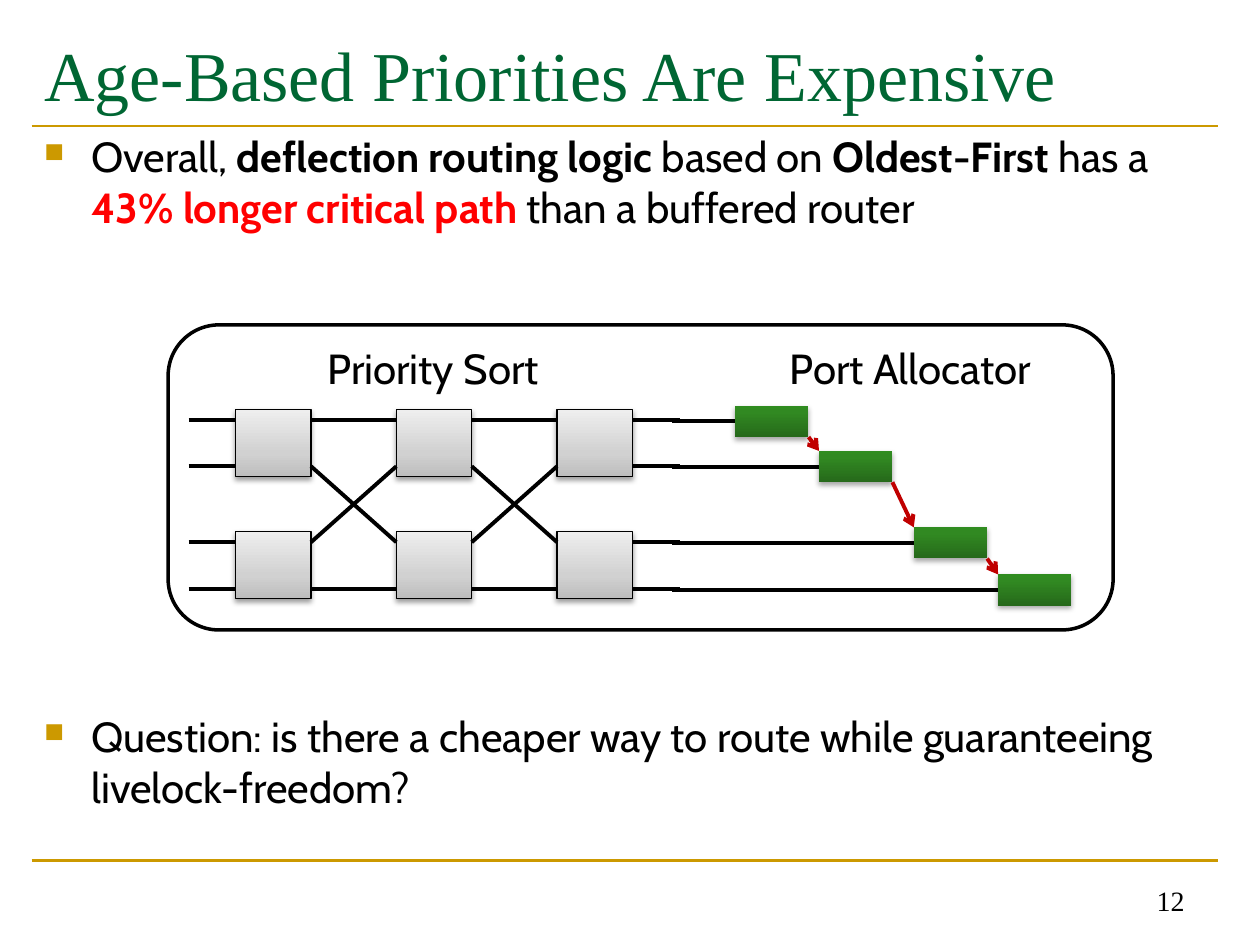
from lxml import etree
from pptx import Presentation, util as u
from pptx.dml.color import RGBColor
from pptx.enum import shapes, text
from pptx.oxml import parse_xml
from pptx.oxml.ns import qn

NS = 'xmlns:a="http://schemas.openxmlformats.org/drawingml/2006/main"'

# Content
TITLE = "Age-Based Priorities Are Expensive"
PAGE = "12"
# Each paragraph: space before in points, then (text, style) runs
BULLETS = [
    (0, [("Overall, ", ""), ("deflection routing logic", "bold"), (" based on ", ""),
         ("Oldest-First", "bold"), (" has a ", ""),
         ("43% longer critical path ", "alert"), ("than a buffered router", "")]),
    (274, [("Question: is there a cheaper way to route while guaranteeing "
            "livelock-freedom?", "")]),
]
LABELS = [("Port Allocator", 15.67, 5.56), ("Priority Sort", 6.35, 5.16)]

THEME = {
    "title_font": "Times New Roman", "body_font": "Cabin",
    "title_size": 40, "body_size": 24, "page_size": 16,
    "title": "006633", "text": "000000", "alert": "FF0000",
    "gold": "CC9900", "arrow": "C00000", "panel": "FFFFFF",
    "sorter": [(0, "BDBDBD"), (35, "D1D1D1"), (100, "EEEEEE")],
    "allocator": [(0, "26691A"), (80, "318922"), (100, "308C20")],
}

# Diagram geometry in centimetres
SORTER_SIZE = (1.52, 1.35)
SORTER_COLUMNS = [4.75 + 3.24 * i for i in range(3)]
SORTER_ROWS = [8.26, 10.72]
WIRES = [8.47, 9.4, 10.93, 11.87]
CROSSING = [0, 2, 1, 3]  # wire reached in the next stage
STUB = 0.95
ALLOCATOR_SIZE = (1.48, 0.63)
ALLOCATORS = [(14.82, 8.18), (16.51, 9.09), (18.42, 10.63), (20.12, 11.58)]
ALLOCATOR_WIRE_LEFT = 13.55

presentation = Presentation()
presentation.slide_width, presentation.slide_height = u.Cm(25.4), u.Cm(19.05)
slide = presentation.slides.add_slide(presentation.slide_layouts[5])


def color(name):
    return RGBColor.from_string(THEME[name])


def format_run(run, font, size, color_name, bold=False):
    run.font.name = font
    run.font.size = u.Pt(size)
    run.font.bold = bold
    run.font.color.rgb = color(color_name)


def add_text_box(left, top, width, height):
    box = slide.shapes.add_textbox(u.Cm(left), u.Cm(top), u.Cm(width), u.Cm(height))
    box.text_frame.word_wrap = True
    return box.text_frame


def add_line(start, end, color_name="text", width=2.25, arrow=False):
    line = slide.shapes.add_connector(
        shapes.MSO_CONNECTOR.STRAIGHT, *(u.Cm(value) for value in (*start, *end)))
    line.line.color.rgb = color(color_name)
    line.line.width = u.Pt(width)
    if arrow:
        etree.SubElement(line.line._get_or_add_ln(), qn("a:tailEnd"), type="arrow")
    etree.SubElement(line._element.spPr, qn("a:effectLst"))


def add_block(left, top, size, gradient, opacity, outlined):
    block = slide.shapes.add_shape(shapes.MSO_SHAPE.RECTANGLE, u.Cm(left), u.Cm(top),
                                   *(u.Cm(value) for value in size))
    if outlined:
        block.line.color.rgb = color("text")
        block.line.width = u.Pt(0.75)
    else:
        block.line.fill.background()
    stops = "".join(f'<a:gs pos="{position * 1000}"><a:srgbClr val="{value}"/></a:gs>'
                    for position, value in THEME[gradient])
    properties = block._element.spPr
    properties.find(qn("a:ln")).addprevious(parse_xml(
        f'<a:gradFill {NS} rotWithShape="1"><a:gsLst>{stops}</a:gsLst>'
        '<a:lin ang="16200000" scaled="0"/></a:gradFill>'))
    properties.append(parse_xml(
        f'<a:effectLst {NS}><a:outerShdw blurRad="{u.Pt(3.1)}" dist="{u.Pt(1.7)}" '
        'dir="5400000" rotWithShape="0"><a:srgbClr val="000000">'
        f'<a:alpha val="{opacity * 1000}"/></a:srgbClr></a:outerShdw></a:effectLst>'))


# Rules above and below the content
for y in (17.35, 2.54):
    add_line((0.64, y), (24.56, y), "gold", 1.5)

# Title
title = slide.shapes.title
title.left, title.top, title.width, title.height = map(u.Cm, (0.64, 0.43, 23.93, 2.11))
title.text_frame.text = TITLE
title.text_frame.vertical_anchor = text.MSO_ANCHOR.MIDDLE
title.text_frame.paragraphs[0].alignment = text.PP_ALIGN.LEFT
format_run(title.text_frame.paragraphs[0].runs[0],
           THEME["title_font"], THEME["title_size"], "title")

# Bullets
body = add_text_box(0.64, 2.51, 23.93, 14.83)
for index, (space, runs) in enumerate(BULLETS):
    paragraph = body.add_paragraph() if index else body.paragraphs[0]
    properties = paragraph._p.get_or_add_pPr()
    properties.set("marL", str(u.Cm(0.95)))
    properties.set("indent", str(u.Cm(-0.95)))
    paragraph.space_before = u.Pt(space)
    for xml in (f'<a:buClr {NS}><a:srgbClr val="{THEME["gold"]}"/></a:buClr>',
                f'<a:buSzPct {NS} val="65000"/>', f'<a:buChar {NS} char="■"/>'):
        properties.append(parse_xml(xml))
    for words, style in runs:
        run = paragraph.add_run()
        run.text = words
        format_run(run, THEME["body_font"], THEME["body_size"],
                   "alert" if style == "alert" else "text", bool(style))

# Page number
page = add_text_box(18.21, 17.35, 5.92, 1.27)
page.text = PAGE
page.vertical_anchor = text.MSO_ANCHOR.BOTTOM
page.paragraphs[0].alignment = text.PP_ALIGN.RIGHT
format_run(page.paragraphs[0].runs[0], THEME["title_font"], THEME["page_size"], "text")

# Router panel
panel = slide.shapes.add_shape(shapes.MSO_SHAPE.ROUNDED_RECTANGLE,
                               *map(u.Cm, (3.39, 6.55, 19.05, 6.15)))
panel.shadow.inherit = False
panel.fill.solid()
panel.fill.fore_color.rgb = color("panel")
panel.line.color.rgb = color("text")
panel.line.width = u.Pt(2)

# Priority sort: blocks, wires between stages, wires in and out
for left in SORTER_COLUMNS:
    for top in SORTER_ROWS:
        add_block(left, top, SORTER_SIZE, "sorter", 38, True)
for left, following in zip(SORTER_COLUMNS, SORTER_COLUMNS[1:]):
    for y, target in zip(WIRES, CROSSING):
        add_line((left + SORTER_SIZE[0], y), (following, WIRES[target]))
sort_right = SORTER_COLUMNS[-1] + SORTER_SIZE[0]
for start, end in ((SORTER_COLUMNS[0] - STUB, SORTER_COLUMNS[0]),
                   (sort_right, sort_right + STUB)):
    for y in WIRES:
        add_line((start, y), (end, y))

# Port allocator: blocks, wires in, arrows from corner to corner
width, height = ALLOCATOR_SIZE
for left, top in ALLOCATORS:
    add_block(left, top, ALLOCATOR_SIZE, "allocator", 35, False)
    middle = top + height / 2
    add_line((ALLOCATOR_WIRE_LEFT, middle), (left, middle))
for (left, top), following in zip(ALLOCATORS, ALLOCATORS[1:]):
    add_line((left + width, top + height), following, "arrow", arrow=True)

# Stage labels
for words, left, label_width in LABELS:
    label = add_text_box(left, 6.77, label_width, 1.28)
    label.text = words
    format_run(label.paragraphs[0].runs[0], THEME["body_font"], THEME["body_size"], "text")

presentation.save("out.pptx")
